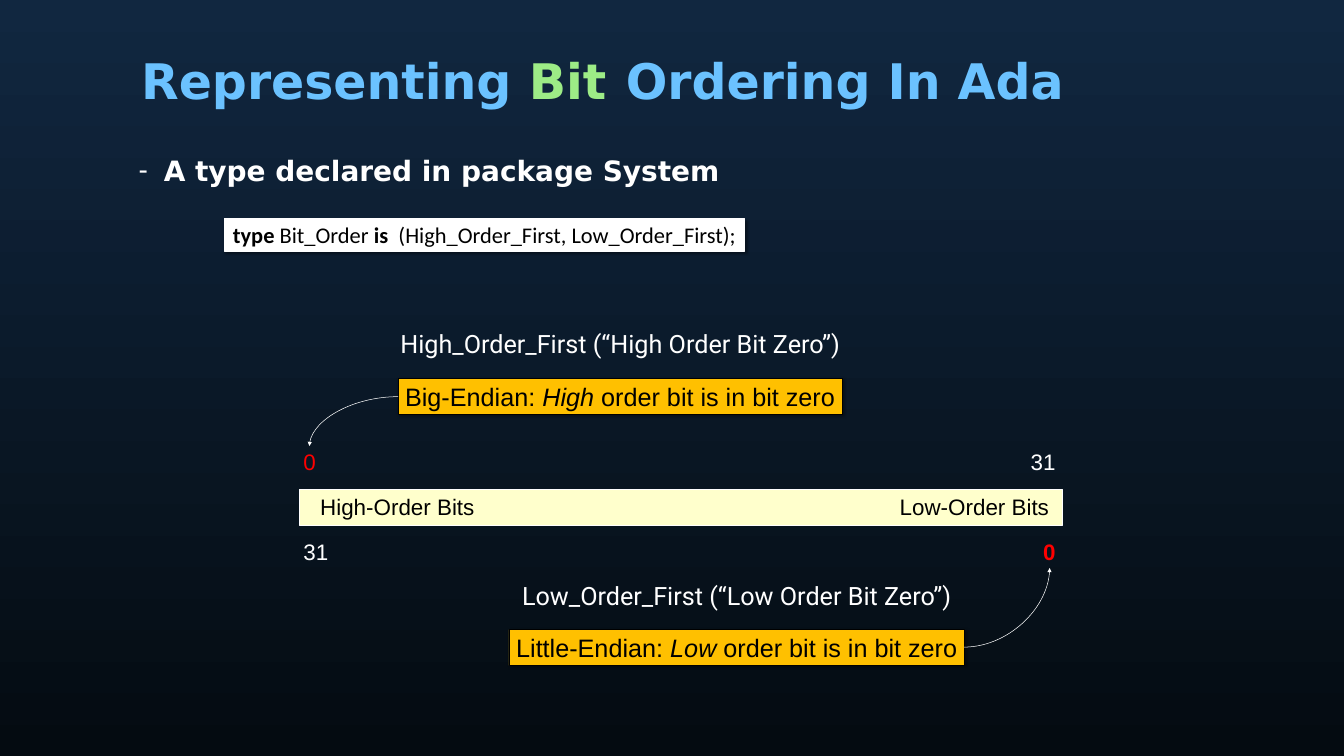
"""Build a slide on representing bit ordering in Ada."""

from dataclasses import dataclass

from lxml import etree
from pptx import Presentation
from pptx.dml.color import RGBColor
from pptx.enum.shapes import MSO_CONNECTOR, MSO_SHAPE
from pptx.enum.text import MSO_ANCHOR, MSO_AUTO_SIZE, PP_ALIGN
from pptx.oxml.ns import qn
from pptx.shapes.autoshape import Shape
from pptx.slide import Slide
from pptx.text.text import TextFrame, _Paragraph
from pptx.util import Inches, Pt

RECTANGLE = MSO_SHAPE.RECTANGLE
CURVE = MSO_CONNECTOR.CURVE
LEFT, CENTER = PP_ALIGN.LEFT, PP_ALIGN.CENTER
TOP, MIDDLE = MSO_ANCHOR.TOP, MSO_ANCHOR.MIDDLE
FIT_SHAPE, NO_FIT = MSO_AUTO_SIZE.SHAPE_TO_FIT_TEXT, MSO_AUTO_SIZE.NONE

COLORS = {
    "top": "112740",
    "bottom": "040B11",
    "title": "6BC2FF",
    "accent": "9DEC86",
    "white": "FFFFFF",
    "black": "000000",
    "red": "FF0000",
    "word": "FFFFCC",
    "callout": "FFC000",
}


@dataclass(frozen=True)
class Run:
    text: str
    bold: bool = False
    italic: bool = False
    color: str = ""
    size: float = 0


@dataclass(frozen=True)
class Label:
    box: tuple[float, float, float, float]
    runs: tuple[Run, ...]
    size: float = 32
    font: str = "Arial"
    color: str = "white"


@dataclass(frozen=True)
class Panel:
    label: Label
    fill: str
    line: str
    line_width: float


@dataclass(frozen=True)
class Arrow:
    start: tuple[float, float]
    end: tuple[float, float]


LABELS = (
    Label((6.24, 9.74, 3.29, 0.64), (Run("High-Order Bits"),), color="black"),
    Label((17.74, 9.74, 3.19, 0.64), (Run("Low-Order Bits"),), color="black"),
    Label((5.92, 8.85, 0.45, 0.64), (Run("0"),), color="red"),
    Label((20.35, 8.85, 0.7, 0.64), (Run("31"),)),
    Label((5.92, 10.63, 0.7, 0.64), (Run("31"),)),
    Label((20.6, 10.63, 0.45, 0.64), (Run("0", bold=True),), color="red"),
    Label((7.61, 6.46, 9.4, 0.71), (Run("High_Order_First (“High Order Bit Zero”)"),), 36, "Roboto"),
    Label((10.1, 11.46, 9.04, 0.71), (Run("Low_Order_First (“Low Order Bit Zero”)"),), 36, "Roboto"),
)

DECLARATION = (
    Run("type ", bold=True),
    Run("Bit_Order "),
    Run("is ", bold=True),
    Run(" (High_Order_First, Low_Order_First);"),
)
BIG_ENDIAN = (Run("Big-Endian: "), Run("High ", italic=True), Run("order bit is in bit zero"))
LITTLE_ENDIAN = (Run("Little-Endian: "), Run("Low", italic=True), Run(" order bit is in bit zero"))

PANELS = (
    Panel(Label((4.45, 4.34, 10.33, 0.64), DECLARATION, 32, "Calibri", "black"), "white", "white", 1),
    Panel(Label((7.9, 7.51, 8.81, 0.71), BIG_ENDIAN, 36, color="black"), "callout", "black", 0.75),
    Panel(Label((10.1, 12.49, 9.04, 0.71), LITTLE_ENDIAN, 36, color="black"), "callout", "black", 0.75),
)

ARROWS = (
    Arrow((7.9, 7.87), (6.14, 8.85)),
    Arrow((19.13, 12.84), (20.83, 11.27)),
)

TITLE = Label(
    (2.75, 0.68, 21.17, 1.57),
    (
        Run("Representing ", bold=True),
        Run("Bit", bold=True, color="accent"),
        Run(" ", bold=True, size=80),
        Run("Ordering In Ada", bold=True),
    ),
    70,
    "DejaVu Sans",
    "title",
)
BULLET = Label(
    (2.75, 3.04, 21.34, 7.58),
    (Run("A type declared in package System", bold=True),),
    40,
    "DejaVu Sans",
)


def rgb(name: str) -> RGBColor:
    """Return a named colour."""
    return RGBColor.from_string(COLORS[name])


def add_runs(paragraph: _Paragraph, label: Label) -> None:
    """Add the runs of a label to a paragraph."""
    for part in label.runs:
        run = paragraph.add_run()
        run.text = part.text
        run.font.name = label.font
        run.font.size = Pt(part.size or label.size)
        run.font.bold = part.bold
        run.font.italic = part.italic
        run.font.color.rgb = rgb(part.color or label.color)


def set_margins(frame: TextFrame, margin: float) -> None:
    """Set equal margins on all sides of a text frame."""
    frame.margin_left = frame.margin_right = Inches(margin)
    frame.margin_top = frame.margin_bottom = Inches(margin)


def fill_label(shape: Shape, label: Label) -> None:
    """Write a centred, unwrapped label in a shape."""
    frame = shape.text_frame
    frame.word_wrap = False
    frame.auto_size = FIT_SHAPE
    frame.vertical_anchor = TOP
    frame.paragraphs[0].alignment = CENTER
    add_runs(frame.paragraphs[0], label)


def add_rectangle(slide: Slide, box: tuple[float, ...], fill: str, line: str, width: float) -> Shape:
    """Add a filled and outlined rectangle."""
    shape = slide.shapes.add_shape(RECTANGLE, *map(Inches, box))
    shape.shadow.inherit = False
    shape.fill.solid()
    shape.fill.fore_color.rgb = rgb(fill)
    shape.line.color.rgb = rgb(line)
    shape.line.width = Pt(width)
    return shape


def add_panel(slide: Slide, panel: Panel) -> None:
    """Add a rectangle with a label and a soft shadow."""
    shape = add_rectangle(slide, panel.label.box, panel.fill, panel.line, panel.line_width)
    effects = shape.element.spPr.find(qn("a:effectLst"))
    shadow = etree.SubElement(
        effects, qn("a:outerShdw"), blurRad=str(Pt(4)), dist=str(Pt(3)), dir="2700000", algn="tl", rotWithShape="0"
    )
    color = etree.SubElement(shadow, qn("a:srgbClr"), val=COLORS["black"])
    etree.SubElement(color, qn("a:alpha"), val="40000")
    fill_label(shape, panel.label)


def add_arrow(slide: Slide, arrow: Arrow) -> None:
    """Add a quarter-curve arrow."""
    connector = slide.shapes.add_connector(CURVE, *map(Inches, arrow.start + arrow.end))
    connector.line.color.rgb = rgb("white")
    connector.line.width = Pt(0.75)
    properties = connector.element.spPr
    properties.find(qn("a:prstGeom")).set("prst", "curvedConnector2")
    etree.SubElement(properties.find(qn("a:ln")), qn("a:tailEnd"), type="triangle")
    etree.SubElement(properties, qn("a:effectLst"))


def add_title(slide: Slide) -> None:
    """Place and format the title placeholder."""
    title = slide.shapes.title
    title.left, title.top, title.width, title.height = map(Inches, TITLE.box)
    frame = title.text_frame
    frame.auto_size = NO_FIT
    frame.vertical_anchor = MIDDLE
    set_margins(frame, 0.05)
    frame.paragraphs[0].alignment = LEFT
    frame.paragraphs[0].line_spacing = 1.1
    add_runs(frame.paragraphs[0], TITLE)


def add_bullet(slide: Slide) -> None:
    """Add the dashed statement below the title."""
    frame = slide.shapes.add_textbox(*map(Inches, BULLET.box)).text_frame
    frame.word_wrap = True
    set_margins(frame, 0)
    paragraph = frame.paragraphs[0]
    properties = paragraph._p.get_or_add_pPr()
    properties.set("marL", str(Inches(0.5)))
    properties.set("indent", str(Inches(-0.5)))
    bullet_color = etree.SubElement(properties, qn("a:buClr"))
    etree.SubElement(bullet_color, qn("a:srgbClr"), val=COLORS["white"])
    etree.SubElement(properties, qn("a:buFont"), typeface="Arial")
    etree.SubElement(properties, qn("a:buChar"), char="-")
    add_runs(paragraph, BULLET)


def main() -> None:
    """Build and save the presentation."""
    presentation = Presentation()
    presentation.slide_width, presentation.slide_height = Inches(26.67), Inches(15)
    slide = presentation.slides.add_slide(presentation.slide_layouts[5])
    background = slide.background.fill
    background.gradient()
    background.gradient_angle = 270
    for stop, name in zip(background.gradient_stops, ("top", "bottom")):
        stop.color.rgb = rgb(name)
    add_title(slide)
    add_bullet(slide)
    add_rectangle(slide, (5.94, 9.71, 15.14, 0.71), "word", "white", 1)
    for panel in PANELS:
        add_panel(slide, panel)
    for label in LABELS:
        fill_label(slide.shapes.add_textbox(*map(Inches, label.box)), label)
    for arrow in ARROWS:
        add_arrow(slide, arrow)
    presentation.save("out.pptx")


if __name__ == "__main__":
    main()
